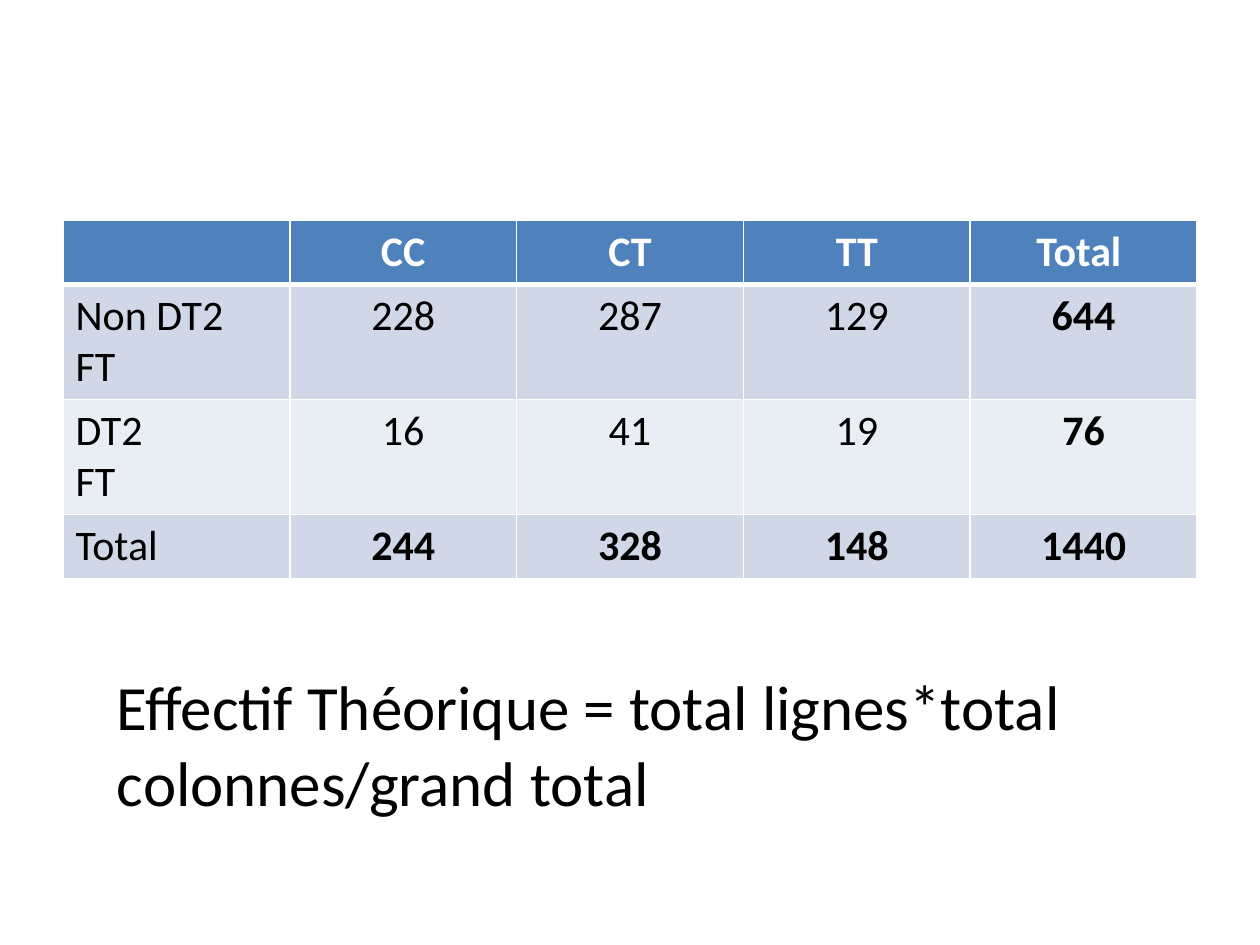
from lxml import etree
from pptx import Presentation
from pptx import util as u
from pptx.dml.color import RGBColor
from pptx.enum import text
from pptx.oxml.ns import qn

FONT = "Calibri"
WHITE, BLACK = "FFFFFF", "000000"
HEADER_FILL = "4F81BD"
BAND_FILLS = ["E9EDF4", "D0D8E8"]
COUNTS = [
    ["", "CC", "CT", "TT", "Total "],
    ["Non DT2\nFT", "228", "287", "129", "644"],
    ["DT2\nFT", "16", "41", "19", "76"],
    ["Total", "244", "328", "148", "1440"],
]
ROW_HEIGHTS = [0.5, 0.9, 0.9, 0.5]


def rgb(value):
    return RGBColor.from_string(value)


def set_font(p, size, color, bold=False):
    p.font.name = FONT
    p.font.size = u.Pt(size)
    p.font.bold = bold
    p.font.color.rgb = rgb(color)


def set_borders(cell, color, **widths):
    """Draw cell borders, widths in points by side; call before filling the cell."""
    tc_pr = cell._tc.get_or_add_tcPr()
    for side in ("L", "R", "T", "B"):
        ln = etree.SubElement(tc_pr, qn(f"a:ln{side}"), w=str(u.Pt(widths.get(side, 1))))
        fill = etree.SubElement(ln, qn("a:solidFill"))
        etree.SubElement(fill, qn("a:srgbClr"), val=color)


def format_cell(cell, row, col):
    header = row == 0
    widths = {0: {"B": 3}, 1: {"T": 3}}.get(row, {})
    set_borders(cell, WHITE, **widths)
    cell.fill.solid()
    cell.fill.fore_color.rgb = rgb(HEADER_FILL if header else BAND_FILLS[row % 2])
    cell.text = COUNTS[row][col]
    is_total = col > 0 and (row == len(COUNTS) - 1 or col == len(COUNTS[0]) - 1)
    for p in cell.text_frame.paragraphs:
        set_font(p, 24, WHITE if header else BLACK, header or is_total)
        if col > 0:
            p.alignment = text.PP_ALIGN.CENTER


def add_counts_table(s):
    table = s.shapes.add_table(
        len(COUNTS), len(COUNTS[0]),
        u.Inches(0.5), u.Inches(1.75), u.Inches(9), u.Inches(sum(ROW_HEIGHTS)),
    ).table
    for row, height in enumerate(ROW_HEIGHTS):
        table.rows[row].height = u.Inches(height)
        for col in range(len(COUNTS[0])):
            format_cell(table.cell(row, col), row, col)


def add_formula(s):
    tf = s.shapes.add_textbox(
        u.Inches(0.83), u.Inches(5.25), u.Inches(8.27), u.Inches(1.31)
    ).text_frame
    tf.word_wrap = True
    tf.auto_size = text.MSO_AUTO_SIZE.SHAPE_TO_FIT_TEXT
    tf.text = "Effectif Théorique = total lignes*total colonnes/grand total"
    set_font(tf.paragraphs[0], 36, BLACK)


def main():
    prs = Presentation()
    prs.slide_width, prs.slide_height = u.Inches(10), u.Inches(7.5)
    s = prs.slides.add_slide(prs.slide_layouts[6])
    add_counts_table(s)
    add_formula(s)
    prs.save("out.pptx")


if __name__ == "__main__":
    main()
